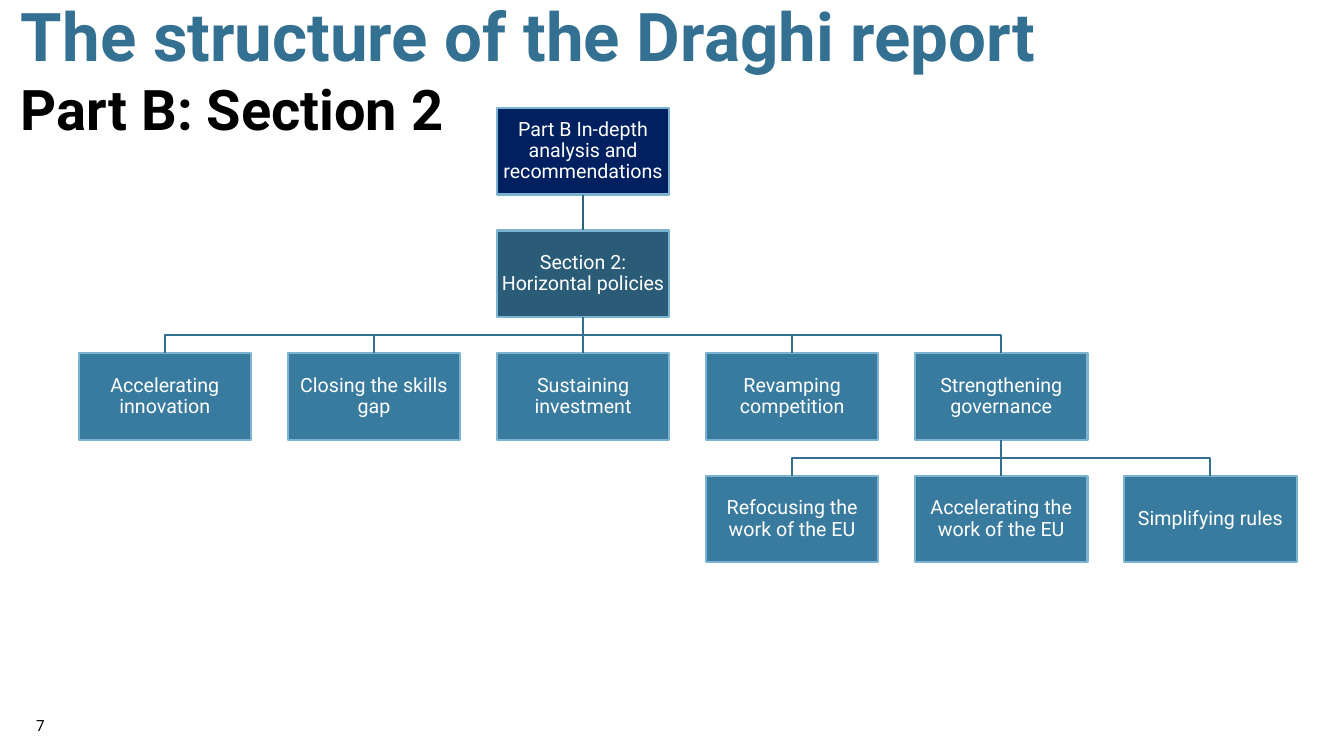
"""Build the slide showing the structure of Part B, Section 2 of the Draghi report."""
from lxml import etree
from pptx import Presentation
from pptx.dml.color import RGBColor
from pptx.enum.shapes import MSO_CONNECTOR, MSO_SHAPE
from pptx.enum.text import MSO_ANCHOR, PP_ALIGN
from pptx.oxml.ns import qn
from pptx.util import Inches, Pt

RECTANGLE = MSO_SHAPE.RECTANGLE
STRAIGHT = MSO_CONNECTOR.STRAIGHT
MIDDLE = MSO_ANCHOR.MIDDLE
CENTER = PP_ALIGN.CENTER
BOTTOM_SIDE, TOP_SIDE = 2, 0

COLORS = {
    "title": "337091", "black": "000000", "white": "FFFFFF",
    "part": "002060", "section": "2A5C77", "topic": "387B9F",
    "border": "7CB3D0", "section_link": "2D637F", "topic_link": "337090",
}
BOX_WIDTH, BOX_HEIGHT = Inches(1.71), Inches(0.86)
LEFT, TOP = Inches(0.78), Inches(1.07)
COLUMN_STEP = (Inches(11.15) - LEFT) / 5
ROW_STEP = (Inches(4.72) - TOP) / 3

PART = "Part B In-depth analysis and recommendations"
SECTION = "Section 2: Horizontal policies"
GOVERNANCE = "Strengthening governance"
ENTRIES = [
    (PART, 2, 0, "part", None),
    (SECTION, 2, 1, "section", PART),
    ("Accelerating innovation", 0, 2, "topic", SECTION),
    ("Closing the skills gap", 1, 2, "topic", SECTION),
    ("Sustaining investment", 2, 2, "topic", SECTION),
    ("Revamping competition", 3, 2, "topic", SECTION),
    (GOVERNANCE, 4, 2, "topic", SECTION),
    ("Refocusing the work of the EU", 3, 3, "topic", GOVERNANCE),
    ("Accelerating the work of the EU", 4, 3, "topic", GOVERNANCE),
    ("Simplifying rules", 5, 3, "topic", GOVERNANCE),
]
HEADINGS = [
    ("The structure of the Draghi report", 48, "title", True, (0.11, -0.11, 12.28, 1.58)),
    ("Part B: Section 2", 40, "black", True, None),
    ("7", 11, "black", False, (0.26, 7.06, 0.72, 0.29)),
]


def write(paragraph, words, size, color, bold=False):
    paragraph.text = words
    for name, value in {"name": "Roboto", "size": Pt(size), "bold": bold}.items():
        setattr(paragraph.font, name, value)
    paragraph.font.color.rgb = RGBColor.from_string(COLORS[color])


def outline(item, color):
    item.line.color.rgb = RGBColor.from_string(COLORS[color])
    item.line.width = Pt(1.5)


prs = Presentation()
prs.slide_width, prs.slide_height = Inches(13.33), Inches(7.5)
slide = prs.slides.add_slide(prs.slide_layouts[6])
shapes = slide.shapes

for words, size, color, bold, place in HEADINGS:
    if place:
        frame = shapes.add_textbox(*map(Inches, place)).text_frame
        frame.word_wrap = True
        paragraph = frame.paragraphs[0]
    else:
        paragraph = frame.add_paragraph()
    write(paragraph, words, size, color, bold)

boxes = {}
for words, column, row, level, parent in ENTRIES:
    box = shapes.add_shape(RECTANGLE, round(LEFT + column * COLUMN_STEP),
                           round(TOP + row * ROW_STEP), BOX_WIDTH, BOX_HEIGHT)
    boxes[words] = box
    box.shadow.inherit = False
    box.fill.solid()
    box.fill.fore_color.rgb = RGBColor.from_string(COLORS[level])
    outline(box, "border")
    frame = box.text_frame
    frame_format = {"word_wrap": True, "vertical_anchor": MIDDLE}
    frame_format.update({f"margin_{side}": Inches(0.01)
                         for side in ("left", "top", "right", "bottom")})
    for name, value in frame_format.items():
        setattr(frame, name, value)
    paragraph = frame.paragraphs[0]
    write(paragraph, words, 14, "white")
    paragraph.alignment = CENTER
    paragraph.line_spacing = 0.9

for words, column, row, level, parent in ENTRIES:
    if parent is None:
        continue
    upper, lower = boxes[parent], boxes[words]
    start_x = upper.left + BOX_WIDTH // 2
    start_y = upper.top + BOX_HEIGHT
    end_x = lower.left + BOX_WIDTH // 2
    if start_x == end_x:
        link = shapes.add_connector(STRAIGHT, start_x, start_y, end_x, lower.top)
        link.begin_connect(upper, BOTTOM_SIDE)
        link.end_connect(lower, TOP_SIDE)
        outline(link, f"{level}_link")
        etree.SubElement(link._element.spPr, qn("a:effectLst"))
    else:
        bend_y = (start_y + lower.top) // 2
        builder = shapes.build_freeform(start_x, start_y)
        builder.add_line_segments(
            [(start_x, bend_y), (end_x, bend_y), (end_x, lower.top)], close=False)
        link = builder.convert_to_shape()
        link.shadow.inherit = False
        link.fill.background()
        outline(link, f"{level}_link")

prs.save("out.pptx")
